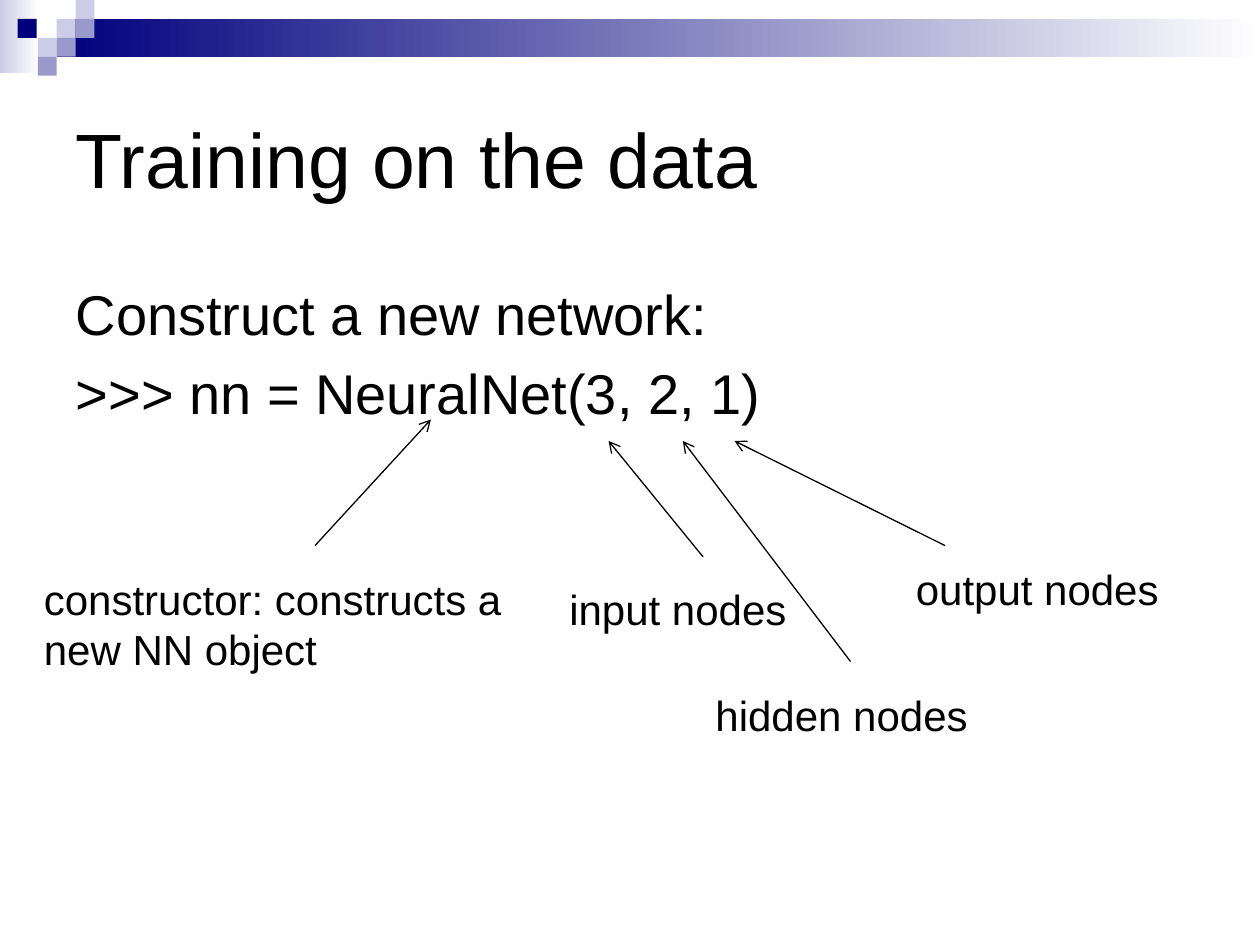
import pptx
import pptx.dml.color
import pptx.enum.shapes
import pptx.enum.text
import pptx.oxml
import pptx.oxml.ns
import pptx.util

Inches = pptx.util.Inches
RGBColor = pptx.dml.color.RGBColor
MSO_AUTO_SIZE = pptx.enum.text.MSO_AUTO_SIZE
MSO_ANCHOR = pptx.enum.text.MSO_ANCHOR

NAVY = RGBColor(0x00, 0x00, 0x7D)
LAVENDER = RGBColor(0x99, 0x99, 0xCC)
PALE = RGBColor(0xCC, 0xCC, 0xE6)
WHITE = RGBColor(0xFF, 0xFF, 0xFF)
BLACK = RGBColor(0x00, 0x00, 0x00)

SQUARE = 0.15
BANDS = [
    (0, 0, 0.31, 0.58, PALE),
    (0.45, 0.15, 9.55, 0.3, NAVY),
]
SQUARES = [
    (0.45, 0.15, PALE),
    (0.6, 0, PALE),
    (0.6, 0.15, LAVENDER),
    (0.3, 0.3, PALE),
    (0.14, 0.15, NAVY),
    (0.45, 0.3, LAVENDER),
    (0.3, 0.45, LAVENDER),
]
CALLOUTS = [
    ("constructor: constructs a new NN object",
     (0.25, 4.5, 4.04, 0.91), True, (2.5, 4.33), (3.42, 3.33)),
    ("input nodes", (4.42, 4.58, 1.94, 0.5), False, (5.58, 4.42), (4.83, 3.5)),
    ("hidden nodes", (5.58, 5.42, 2.22, 0.5), False, (6.75, 5.25), (5.42, 3.5)),
    ("output nodes", (7.17, 4.42, 2.15, 0.5), False, (7.5, 4.33), (5.83, 3.5)),
]


def add_rectangle(slide, left, top, width, height):
    shape = slide.shapes.add_shape(
        pptx.enum.shapes.MSO_SHAPE.RECTANGLE,
        Inches(left), Inches(top), Inches(width), Inches(height))
    shape.shadow.inherit = False
    shape.line.fill.background()
    return shape


def add_band(slide, left, top, width, height, color):
    fill = add_rectangle(slide, left, top, width, height).fill
    fill.gradient()
    fill.gradient_angle = 0
    for stop, stop_color in zip(fill.gradient_stops, (color, WHITE)):
        stop.color.rgb = stop_color


def add_square(slide, left, top, color):
    fill = add_rectangle(slide, left, top, SQUARE, SQUARE).fill
    fill.solid()
    fill.fore_color.rgb = color


def format_runs(text_frame, size):
    for paragraph in text_frame.paragraphs:
        paragraph.alignment = pptx.enum.text.PP_ALIGN.LEFT
        for run in paragraph.runs:
            run.font.name = "Arial"
            run.font.size = pptx.util.Pt(size)
            run.font.color.rgb = BLACK


def fill_placeholder(placeholder, text, box, size, anchor):
    placeholder.left, placeholder.top, placeholder.width, placeholder.height = map(Inches, box)
    text_frame = placeholder.text_frame
    text_frame.text = text
    text_frame.auto_size = MSO_AUTO_SIZE.NONE
    text_frame.vertical_anchor = anchor
    format_runs(text_frame, size)


def remove_bullets(text_frame):
    for paragraph in text_frame.paragraphs:
        properties = paragraph._p.get_or_add_pPr()
        properties.set("marL", "0")
        properties.set("indent", "0")
        properties.append(pptx.oxml.parse_xml(
            f"<a:buNone {pptx.oxml.ns.nsdecls('a')}/>"))


def add_arrow(slide, start, end):
    connector = slide.shapes.add_connector(
        pptx.enum.shapes.MSO_CONNECTOR.STRAIGHT,
        *map(Inches, start), *map(Inches, end))
    connector.line.color.rgb = BLACK
    connector.line.width = pptx.util.Pt(0.75)
    namespace = pptx.oxml.ns.nsdecls("a")
    connector.line._get_or_add_ln().append(
        pptx.oxml.parse_xml(f'<a:tailEnd {namespace} type="arrow"/>'))
    connector._element.spPr.append(
        pptx.oxml.parse_xml(f"<a:effectLst {namespace}/>"))


def add_label(slide, text, box, wrap):
    text_frame = slide.shapes.add_textbox(*map(Inches, box)).text_frame
    text_frame.text = text
    text_frame.word_wrap = wrap
    text_frame.auto_size = MSO_AUTO_SIZE.SHAPE_TO_FIT_TEXT
    format_runs(text_frame, 24)


def main():
    presentation = pptx.Presentation()
    presentation.slide_width = Inches(10)
    presentation.slide_height = Inches(7.5)
    slide = presentation.slides.add_slide(presentation.slide_layouts[1])

    for band in BANDS:
        add_band(slide, *band)
    for square in SQUARES:
        add_square(slide, *square)

    fill_placeholder(slide.shapes.title, "Training on the data",
                     (0.5, 0.5, 9, 1.5), 44, MSO_ANCHOR.MIDDLE)
    body = slide.placeholders[1]
    fill_placeholder(body, "Construct a new network:\n>>> nn = NeuralNet(3, 2, 1)",
                     (0.5, 2.17, 9, 1.33), 32, MSO_ANCHOR.TOP)
    remove_bullets(body.text_frame)

    for text, box, wrap, start, end in CALLOUTS:
        add_arrow(slide, start, end)
        add_label(slide, text, box, wrap)

    presentation.save("out.pptx")


if __name__ == "__main__":
    main()
